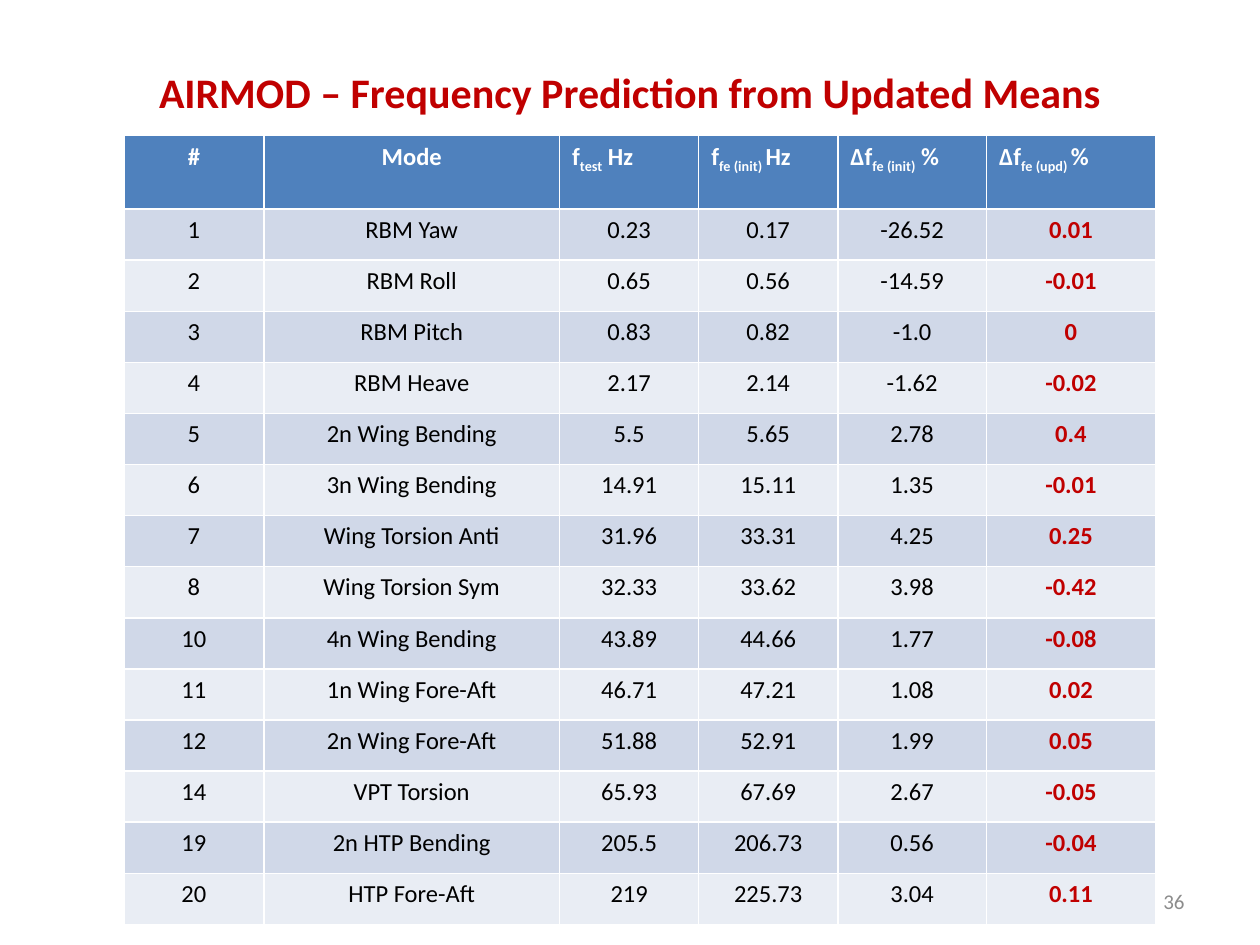
import pptx
import pptx.dml.color
import pptx.enum.text
import pptx.util

Pt = pptx.util.Pt
Align = pptx.enum.text.PP_ALIGN
Anchor = pptx.enum.text.MSO_ANCHOR

RED, WHITE, BLACK, GREY = "C00000", "FFFFFF", "000000", "8C8C8C"
BLUE, BANDS = "4F81BD", ("D0D8E8", "E9EDF4")

COLS = (80, 169, 79.5, 79.5, 85, 96.5)
HEAD_H, ROW_H = 42, 29.2

# Header cells: plain text, subscript, plain text
HEADS = (
    ("#",),
    ("Mode",),
    ("f", "test", " Hz"),
    ("f", "fe (init) ", "Hz"),
    ("Δf", "fe (init)", " %"),
    ("Δf", "fe (upd) ", "%"),
)

MODES = (
    ("1", "RBM Yaw", "0.23", "0.17", "-26.52", "0.01"),
    ("2", "RBM Roll", "0.65", "0.56", "-14.59", "-0.01"),
    ("3", "RBM Pitch", "0.83", "0.82", "-1.0", "0"),
    ("4", "RBM Heave", "2.17", "2.14", "-1.62", "-0.02"),
    ("5", "2n Wing Bending", "5.5", "5.65", "2.78", "0.4"),
    ("6", "3n Wing Bending", "14.91", "15.11", "1.35", "-0.01"),
    ("7", "Wing Torsion Anti", "31.96", "33.31", "4.25", "0.25"),
    ("8", "Wing Torsion Sym", "32.33", "33.62", "3.98", "-0.42"),
    ("10", "4n Wing Bending", "43.89", "44.66", "1.77", "-0.08"),
    ("11", "1n Wing Fore-Aft", "46.71", "47.21", "1.08", "0.02"),
    ("12", "2n Wing Fore-Aft", "51.88", "52.91", "1.99", "0.05"),
    ("14", "VPT Torsion", "65.93", "67.69", "2.67", "-0.05"),
    ("19", "2n HTP Bending", "205.5", "206.73", "0.56", "-0.04"),
    ("20", "HTP Fore-Aft", "219", "225.73", "3.04", "0.11"),
)


def paint(target, color):
    target.rgb = pptx.dml.color.RGBColor.from_string(color)


def add_run(para, text, size, color, bold=False, sub=False):
    run = para.add_run()
    run.text = text
    font = run.font
    font.name, font.size, font.bold = "Calibri", Pt(size), bold
    paint(font.color, color)
    if sub:
        run._r.get_or_add_rPr().set("baseline", "-25000")


def place(shape, left, top, width, height):
    shape.left, shape.top = Pt(left), Pt(top)
    shape.width, shape.height = Pt(width), Pt(height)


def add_title(slide, text):
    title = slide.shapes.title
    place(title, 36, 21.6, 648, 61.2)
    title.text_frame.vertical_anchor = Anchor.MIDDLE
    para = title.text_frame.paragraphs[0]
    para.alignment = Align.CENTER
    add_run(para, text, 24, RED, bold=True)


def add_number(slide, text):
    box = slide.shapes.add_textbox(Pt(516), Pt(500.4), Pt(168), Pt(28.8))
    frame = box.text_frame
    frame.word_wrap = True
    frame.vertical_anchor = Anchor.MIDDLE
    para = frame.paragraphs[0]
    para.alignment = Align.RIGHT
    add_run(para, text, 12, GREY)


def fill_cell(cell, color, align):
    cell.fill.solid()
    paint(cell.fill.fore_color, color)
    para = cell.text_frame.paragraphs[0]
    para.alignment = align
    return para


def add_modes(slide):
    height = HEAD_H + ROW_H * len(MODES)
    # The default table style supplies the white cell borders
    table = slide.shapes.add_table(
        len(MODES) + 1, len(COLS), Pt(70.8), Pt(77.5), Pt(sum(COLS)), Pt(height)
    ).table
    for col, width in zip(table.columns, COLS):
        col.width = Pt(width)
    for row in table.rows:
        row.height = Pt(ROW_H)
    table.rows[0].height = Pt(HEAD_H)

    # Header row
    for c, parts in enumerate(HEADS):
        align = Align.CENTER if len(parts) == 1 else Align.LEFT
        para = fill_cell(table.cell(0, c), BLUE, align)
        for i, part in enumerate(parts):
            add_run(para, part, 14, WHITE, bold=True, sub=i == 1)

    # One banded row per mode, last column stressed
    for r, mode in enumerate(MODES):
        for c, text in enumerate(mode):
            para = fill_cell(table.cell(r + 1, c), BANDS[r % 2], Align.CENTER)
            para.line_spacing = Pt(16.8)
            last = c == len(COLS) - 1
            add_run(para, text, 14, RED if last else BLACK, bold=last)


def main():
    deck = pptx.Presentation()
    deck.slide_width, deck.slide_height = Pt(720), Pt(540)
    slide = deck.slides.add_slide(deck.slide_layouts[5])
    add_title(slide, "AIRMOD – Frequency Prediction from Updated Means")
    add_number(slide, "36")
    add_modes(slide)
    deck.save("out.pptx")


if __name__ == "__main__":
    main()
